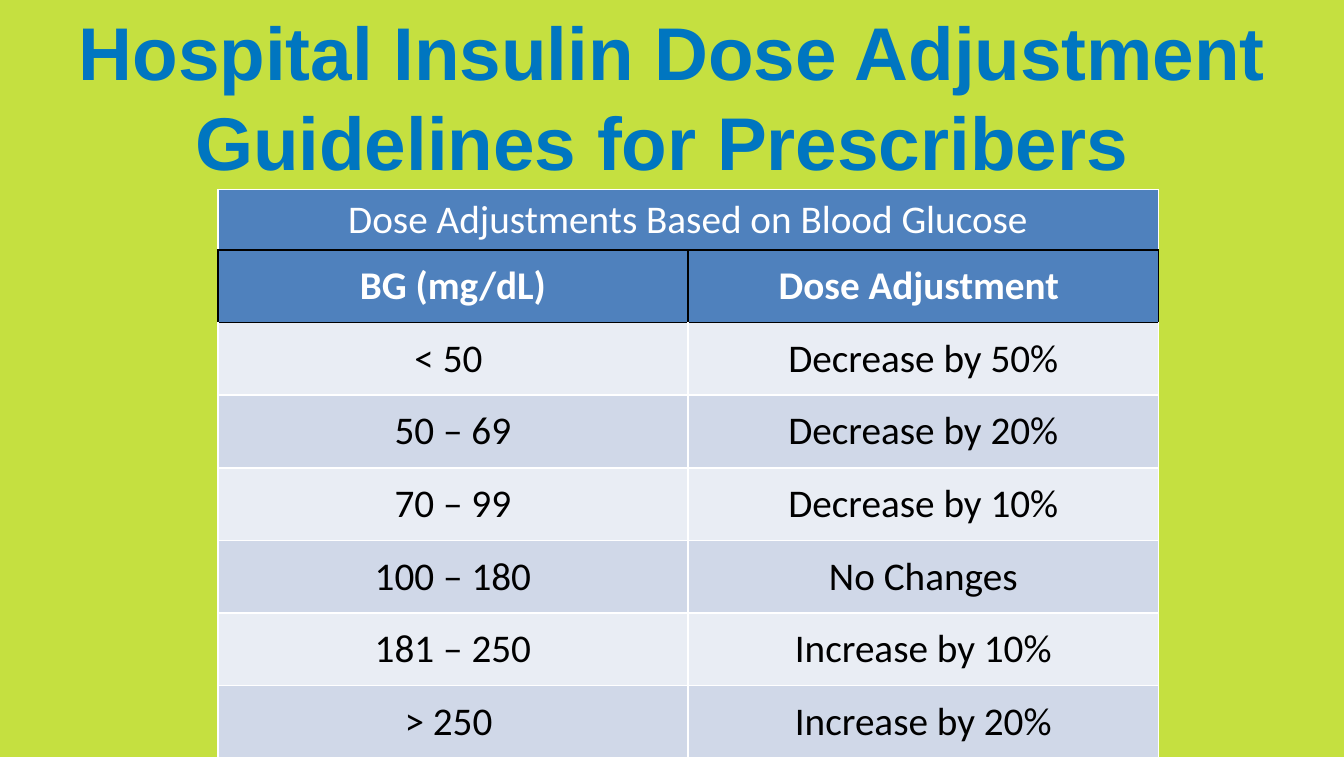
from typing import NamedTuple

from lxml import etree
from pptx import Presentation
from pptx import util as u
from pptx.dml.color import RGBColor
from pptx.enum import text
from pptx.oxml.ns import qn

COLOURS = {
    "background": "C5E040",
    "title": "0076C0",
    "header": "4F81BD",
    "light_band": "E9EDF4",
    "dark_band": "D0D8E8",
    "white": "FFFFFF",
    "black": "000000",
}


class TextStyle(NamedTuple):
    font: str
    size: float
    colour: str
    bold: bool = False


class RowStyle(NamedTuple):
    fill: str
    text: TextStyle
    side: str = "white"
    top: str = "white"
    bottom: str = "white"


class Row(NamedTuple):
    glucose: str
    adjustment: str


TITLE = TextStyle("Arial", 40, "title", True)
BODY = TextStyle("Calibri", 21, "black")
CAPTION_ROW = RowStyle("header", TextStyle("Calibri", 21, "white"), bottom="black")
HEADING_ROW = RowStyle("header", TextStyle("Calibri", 21, "white", True),
                       "black", "black", "black")

ROWS = [
    Row("Dose Adjustments Based on Blood Glucose", ""),
    Row("BG (mg/dL)", "Dose Adjustment "),
    Row("< 50 ", "Decrease by 50%"),
    Row("50 – 69", "Decrease by 20%"),
    Row("70 – 99", "Decrease by 10%"),
    Row("100 – 180", "No Changes"),
    Row("181 – 250", "Increase by 10%"),
    Row("> 250 ", "Increase by 20%"),
]
CAPTION_HEIGHT = 0.45
ROW_HEIGHT = 0.54
COLUMN_WIDTH = 3.5


def colour(name: str) -> RGBColor:
    return RGBColor.from_string(COLOURS[name])


def write(frame, words: str, style: TextStyle) -> None:
    paragraph = frame.paragraphs[0]
    paragraph.alignment = text.PP_ALIGN.CENTER
    run = paragraph.add_run()
    run.text = words
    run.font.name = style.font
    run.font.size = u.Pt(style.size)
    run.font.bold = style.bold
    run.font.color.rgb = colour(style.colour)


def add_borders(cell, style: RowStyle) -> None:
    """Put 1 pt lines ahead of the fill, in the order the schema requires."""
    properties = cell._tc.get_or_add_tcPr()
    edges = [("a:lnL", style.side), ("a:lnR", style.side),
             ("a:lnT", style.top), ("a:lnB", style.bottom)]
    for position, (tag, name) in enumerate(edges):
        line = etree.Element(qn(tag), w=str(u.Pt(1)))
        fill = etree.SubElement(line, qn("a:solidFill"))
        etree.SubElement(fill, qn("a:srgbClr"), val=COLOURS[name])
        properties.insert(position, line)


def row_style(index: int) -> RowStyle:
    if index == 0:
        return CAPTION_ROW
    if index == 1:
        return HEADING_ROW
    band = "dark_band" if index % 2 else "light_band"
    return RowStyle(band, BODY, top="black" if index == 2 else "white")


def add_title(slide, words: str) -> None:
    shape = slide.shapes.add_textbox(u.Inches(0), u.Inches(0.29),
                                     u.Inches(10), u.Inches(0.84))
    frame = shape.text_frame
    frame.word_wrap = True
    frame.vertical_anchor = text.MSO_ANCHOR.MIDDLE
    write(frame, words, TITLE)


def add_dose_table(slide, rows: list[Row]) -> None:
    height = CAPTION_HEIGHT + ROW_HEIGHT * (len(rows) - 1)
    table = slide.shapes.add_table(len(rows), 2, u.Inches(1.62), u.Inches(1.41),
                                   u.Inches(2 * COLUMN_WIDTH), u.Inches(height)).table
    for column in table.columns:
        column.width = u.Inches(COLUMN_WIDTH)
    table.cell(0, 0).merge(table.cell(0, 1))
    for index, row in enumerate(rows):
        table.rows[index].height = u.Inches(ROW_HEIGHT if index else CAPTION_HEIGHT)
        style = row_style(index)
        for cell, words in zip(table.rows[index].cells, row):
            cell.fill.solid()
            cell.fill.fore_color.rgb = colour(style.fill)
            add_borders(cell, style)
            cell.vertical_anchor = text.MSO_ANCHOR.MIDDLE
            cell.margin_left = cell.margin_right = u.Inches(0.08)
            cell.margin_top = cell.margin_bottom = u.Inches(0.04)
            if words:
                write(cell.text_frame, words, style.text)


def main() -> None:
    presentation = Presentation()
    presentation.slide_width = u.Inches(10)
    presentation.slide_height = u.Inches(5.63)
    slide = presentation.slides.add_slide(presentation.slide_layouts[6])
    slide.background.fill.solid()
    slide.background.fill.fore_color.rgb = colour("background")
    add_title(slide, "Hospital Insulin Dose Adjustment Guidelines for Prescribers ")
    add_dose_table(slide, ROWS)
    presentation.save("out.pptx")


if __name__ == "__main__":
    main()
